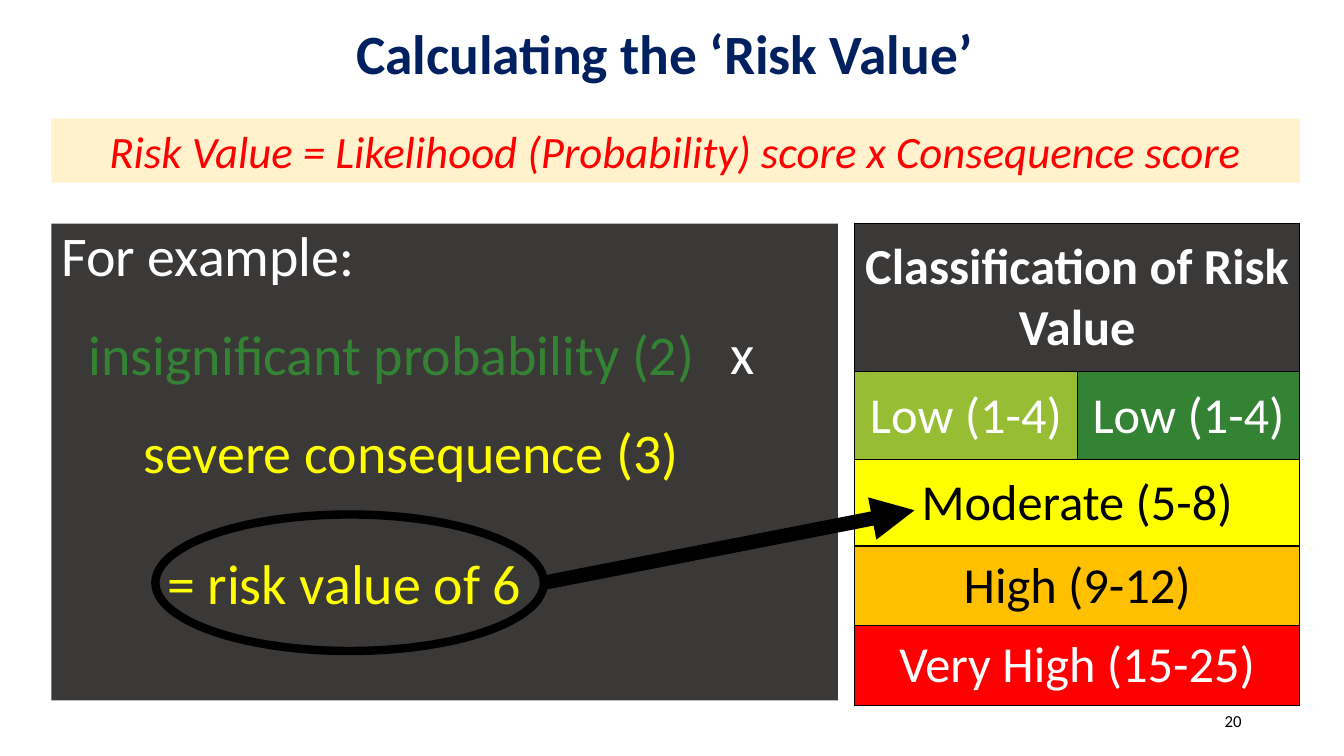
from lxml import etree
from pptx import Presentation
from pptx.dml.color import RGBColor
from pptx.enum.shapes import MSO_CONNECTOR, MSO_SHAPE
from pptx.enum.text import MSO_ANCHOR, MSO_AUTO_SIZE, PP_ALIGN
from pptx.oxml import parse_xml
from pptx.oxml.ns import nsdecls, qn
from pptx.util import Pt

EMU_PER_PX = 9525

BLACK = RGBColor(0x00, 0x00, 0x00)
WHITE = RGBColor(0xFF, 0xFF, 0xFF)
NAVY = RGBColor(0x00, 0x20, 0x60)
CHARCOAL = RGBColor(0x3B, 0x38, 0x38)
CREAM = RGBColor(0xFF, 0xF2, 0xCC)
LIME = RGBColor(0x97, 0xBD, 0x34)
GREEN = RGBColor(0x34, 0x83, 0x34)
YELLOW = RGBColor(0xFF, 0xFF, 0x00)
AMBER = RGBColor(0xFF, 0xC0, 0x00)
RED = RGBColor(0xFF, 0x00, 0x00)

# Each row: height, then (text, fill, text colour); a single entry spans the row
RISK_CLASSES = [
    (141, [("Classification of Risk Value", CHARCOAL, WHITE)]),
    (84, [("Low (1-4)", LIME, WHITE), ("Low (1-4)", GREEN, WHITE)]),
    (82, [("Moderate (5-8)", YELLOW, BLACK)]),
    (76, [("High (9-12)", AMBER, BLACK)]),
    (76, [("Very High (15-25)", RED, WHITE)]),
]


def px(*lengths):
    return [length * EMU_PER_PX for length in lengths]


def write(frame, text, size=40, color=WHITE, bold=False, italic=False,
          align=PP_ALIGN.LEFT, anchor=MSO_ANCHOR.TOP, spacing=None, before=None):
    frame.word_wrap = True
    frame.vertical_anchor = anchor
    paragraph = frame.paragraphs[0]
    paragraph.alignment = align
    paragraph.line_spacing = spacing
    paragraph.space_before = before
    run = paragraph.add_run()
    run.text = text
    font = run.font
    font.name, font.size = "Calibri", Pt(size)
    font.bold, font.italic = bold, italic
    font.color.rgb = color


def add_label(slide, box, text, **style):
    label = slide.shapes.add_textbox(*px(*box))
    write(label.text_frame, text, **style)


def add_panel(slide, box, fill, text, **style):
    panel = slide.shapes.add_shape(MSO_SHAPE.RECTANGLE, *px(*box))
    panel.shadow.inherit = False
    panel.fill.solid()
    panel.fill.fore_color.rgb = fill
    panel.line.fill.background()
    write(panel.text_frame, text, **style)


def set_title(slide, box, text, **style):
    title = slide.shapes.title
    title.left, title.top, title.width, title.height = px(*box)
    title.fill.solid()
    title.fill.fore_color.rgb = WHITE
    title.text_frame.auto_size = MSO_AUTO_SIZE.NONE
    write(title.text_frame, text, **style)


def add_borders(cell):
    properties = cell._tc.get_or_add_tcPr()
    for index, side in enumerate(("lnL", "lnR", "lnT", "lnB")):
        properties.insert(index, parse_xml(
            f'<a:{side} {nsdecls("a")} w="{Pt(1)}"><a:solidFill>'
            f'<a:srgbClr val="{BLACK}"/></a:solidFill></a:{side}>'))


def add_class_table(slide, left, top, width):
    height = sum(row_height for row_height, _ in RISK_CLASSES)
    table = slide.shapes.add_table(
        len(RISK_CLASSES), 2, *px(left, top, width, height)).table
    table.first_row = table.horz_banding = False
    for row, (row_height, entries) in enumerate(RISK_CLASSES):
        table.rows[row].height = px(row_height)[0]
        if len(entries) == 1:
            table.cell(row, 0).merge(table.cell(row, 1))
        for column, (text, fill, color) in enumerate(entries):
            cell = table.cell(row, column)
            cell.fill.solid()
            cell.fill.fore_color.rgb = fill
            cell.vertical_anchor = MSO_ANCHOR.MIDDLE
            write(cell.text_frame, text, size=36, color=color, bold=row == 0,
                  align=PP_ALIGN.CENTER, anchor=MSO_ANCHOR.MIDDLE)
        for column in range(2):
            add_borders(table.cell(row, column))


def add_ring(slide, box):
    ring = slide.shapes.add_shape(MSO_SHAPE.OVAL, *px(*box))
    ring.shadow.inherit = False
    ring.fill.background()
    ring.line.color.rgb = BLACK
    ring.line.width = Pt(6)


def add_arrow(slide, start, end):
    arrow = slide.shapes.add_connector(
        MSO_CONNECTOR.STRAIGHT, *px(*start, *end))
    arrow.line.color.rgb = BLACK
    arrow.line.width = Pt(10.25)
    etree.SubElement(arrow.line._get_or_add_ln(), qn("a:tailEnd"), type="triangle")
    etree.SubElement(arrow._element.spPr, qn("a:effectLst"))


def main():
    deck = Presentation()
    deck.slide_width, deck.slide_height = px(1280, 720)
    slide = deck.slides.add_slide(deck.slide_layouts[5])
    center = PP_ALIGN.CENTER

    # Title and formula
    set_title(slide, (81, 23, 1104, 65), "Calculating the ‘Risk Value’",
              size=39.6, color=NAVY, bold=True, align=center,
              anchor=MSO_ANCHOR.MIDDLE, spacing=0.8)
    add_panel(slide, (49, 113, 1189, 61), CREAM,
              "Risk Value = Likelihood (Probability) score x Consequence score",
              size=32, color=RED, italic=True, align=center)

    # Worked example
    add_panel(slide, (49, 213, 749, 454), CHARCOAL, "For example:",
              spacing=0.9, before=Pt(10))
    add_label(slide, (75, 300, 630, 74), "insignificant probability (2)",
              color=GREEN)
    add_label(slide, (665, 299, 84, 74), "x", align=center)
    add_label(slide, (127, 393, 567, 74), "severe consequence (3)", color=YELLOW)
    add_label(slide, (62, 518, 520, 74), " = risk value of 6",
              color=YELLOW, align=center)

    # Classification, with the result pointing at its class
    add_class_table(slide, 814, 213, 424)
    add_arrow(slide, (518, 555), (871, 486))
    add_ring(slide, (148, 490, 370, 130))

    # Slide number
    add_label(slide, (904, 667, 288, 38), "20", size=12, color=BLACK,
              align=PP_ALIGN.RIGHT, anchor=MSO_ANCHOR.MIDDLE)

    deck.save("out.pptx")


if __name__ == "__main__":
    main()
